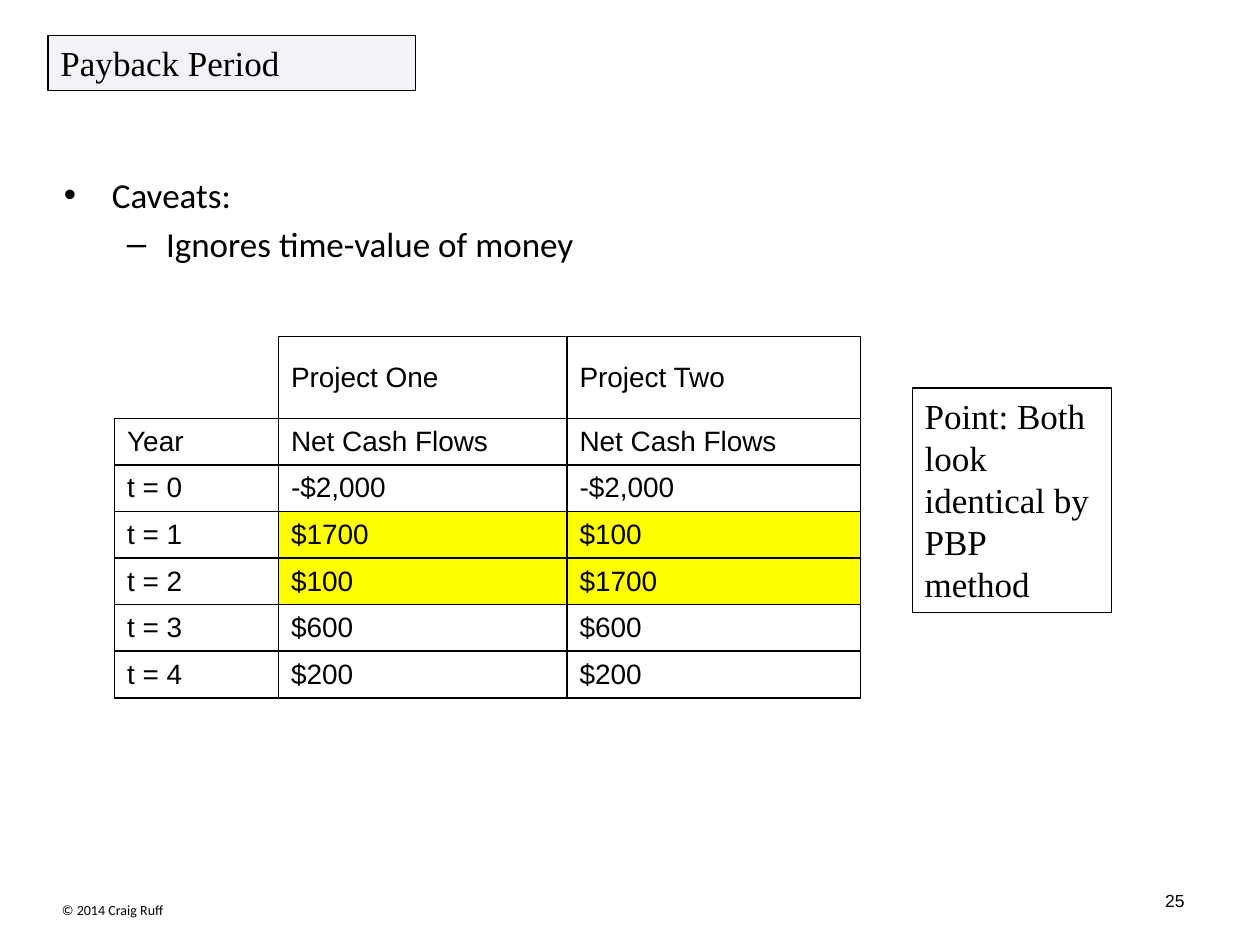
import pptx
import pptx.dml.color
import pptx.enum.shapes
import pptx.enum.text
import pptx.oxml
import pptx.oxml.ns
import pptx.util
from pptx.util import Inches

ANCHOR = pptx.enum.text.MSO_ANCHOR
ALIGN = pptx.enum.text.PP_ALIGN
BLACK, NAVY, YELLOW = "000000", "002060", "FFFF00"


def color(hex_code):
    return pptx.dml.color.RGBColor.from_string(hex_code)


def xml(markup):
    tag, rest = markup.split(" ", 1)
    return pptx.oxml.parse_xml(f"{tag} {pptx.oxml.ns.nsdecls('a')} {rest}")


class SlideBuilder:
    serif, sans, body = "Times New Roman", "Arial", "Calibri"

    def __init__(self, slide):
        self.slide = slide

    def format_text(self, paragraph, font, size, align=ALIGN.LEFT):
        paragraph.alignment = align
        for run in paragraph.runs:
            run.font.name = font
            run.font.size = pptx.util.Pt(size)
            run.font.color.rgb = color(BLACK)

    def indent(self, paragraph, left, hanging):
        properties = paragraph._p.get_or_add_pPr()
        properties.set("marL", str(Inches(left)))
        properties.set("indent", str(-Inches(hanging)))
        return properties

    def fill_frame(self, shape, text, font, size, align=ALIGN.LEFT, anchor=ANCHOR.TOP):
        frame = shape.text_frame
        frame.text = text
        frame.word_wrap = True
        frame.auto_size = pptx.enum.text.MSO_AUTO_SIZE.NONE
        frame.vertical_anchor = anchor
        self.format_text(frame.paragraphs[0], font, size, align)

    def outline(self, shape):
        shape.line.color.rgb = color(BLACK)
        shape.line.width = pptx.util.Pt(0.75)

    def title(self, text, left, top, width, height, tint, opacity):
        title = self.slide.shapes.title
        title.left, title.top = Inches(left), Inches(top)
        title.width, title.height = Inches(width), Inches(height)
        self.fill_frame(title, text, self.serif, 20)
        title.fill.solid()
        title.fill.fore_color.rgb = color(tint)
        tint_element = title._element.spPr.find(".//" + pptx.oxml.ns.qn("a:srgbClr"))
        tint_element.append(xml(f'<a:alpha val="{opacity * 1000}"/>'))
        self.outline(title)

    def label(self, text, box, font, size, align, anchor=ANCHOR.TOP):
        label = self.slide.shapes.add_textbox(*map(Inches, box))
        self.fill_frame(label, text, font, size, align, anchor)

    def callout(self, text, box):
        callout = self.slide.shapes.add_shape(
            pptx.enum.shapes.MSO_SHAPE.RECTANGLE, *map(Inches, box))
        callout.shadow.inherit = False
        callout.fill.background()
        self.outline(callout)
        self.fill_frame(callout, text, self.serif, 20)

    def bullets(self, items, box):
        frame = self.slide.shapes.add_textbox(*map(Inches, box)).text_frame
        frame.word_wrap = True
        frame.text = "\n".join(text for text, *_ in items)
        for paragraph, (_, level, mark, left, hanging) in zip(frame.paragraphs, items):
            paragraph.level = level
            paragraph.space_before = pptx.util.Pt(4)
            self.format_text(paragraph, self.body, 20)
            properties = self.indent(paragraph, left, hanging)
            properties.append(xml('<a:buFont typeface="Arial"/>'))
            properties.append(xml(f'<a:buChar char="{mark}"/>'))

    def borders(self, cell, sides):
        properties = cell._tc.get_or_add_tcPr()
        for side in "LRTB":
            if side in sides:
                paint = f'<a:solidFill><a:srgbClr val="{BLACK}"/></a:solidFill>'
            else:
                paint = "<a:noFill/>"
            properties.append(xml(f'<a:ln{side} w="12700">{paint}</a:ln{side}>'))

    def table(self, rows, left, top, widths, heights, highlighted):
        table = self.slide.shapes.add_table(
            len(rows), len(widths), Inches(left), Inches(top),
            Inches(sum(widths)), Inches(sum(heights))).table
        table.first_row = table.horz_banding = False
        for column, width in zip(table.columns, widths):
            column.width = Inches(width)
        for r, (row, height) in enumerate(zip(rows, heights)):
            table.rows[r].height = Inches(height)
            for c, text in enumerate(row):
                cell = table.cell(r, c)
                self.borders(cell, "LRTB" if text else "RB")
                if (r, c) in highlighted:
                    cell.fill.solid()
                    cell.fill.fore_color.rgb = color(YELLOW)
                else:
                    cell.fill.background()
                cell.vertical_anchor = ANCHOR.MIDDLE
                if text:
                    cell.text_frame.text = text
                    paragraph = cell.text_frame.paragraphs[0]
                    self.format_text(paragraph, self.sans, 16)
                    self.indent(paragraph, 0.51, 0.51)


def main():
    deck = pptx.Presentation()
    deck.slide_width, deck.slide_height = Inches(10), Inches(7.5)
    page = SlideBuilder(deck.slides.add_slide(deck.slide_layouts[5]))

    # Title and caveats
    page.title("Payback Period", 0.38, 0.28, 2.92, 0.44, NAVY, 5)
    page.bullets([
        ("Caveats:", 0, "•", 0.38, 0.38),
        ("Ignores time-value of money", 1, "–", 0.81, 0.31),
    ], (0.41, 1.33, 8, 2.75))

    # Cash flows, with the swapped years highlighted
    cash_flows = [
        ("", "Project One", "Project Two"),
        ("Year", "Net Cash Flows", "Net Cash Flows"),
        ("t = 0", "-$2,000", "-$2,000"),
        ("t = 1", "$1700", "$100"),
        ("t = 2", "$100", "$1700"),
        ("t = 3", "$600", "$600"),
        ("t = 4", "$200", "$200"),
    ]
    swapped = {(row, column) for row in (3, 4) for column in (1, 2)}
    page.table(cash_flows, 0.91, 2.67, [1.3, 2.29, 2.33], [0.65] + [0.37] * 6, swapped)

    # Conclusion
    page.callout("Point: Both look identical by PBP method", (7.24, 3.08, 1.58, 1.78))

    # Footer
    page.label("25", (7.17, 6.95, 2.33, 0.4), page.sans, 10, ALIGN.RIGHT, ANCHOR.MIDDLE)
    page.label("© 2014 Craig Ruff", (0.29, 7.11, 1.21, 0.24), page.body, 8, ALIGN.CENTER)

    deck.save("out.pptx")


if __name__ == "__main__":
    main()
